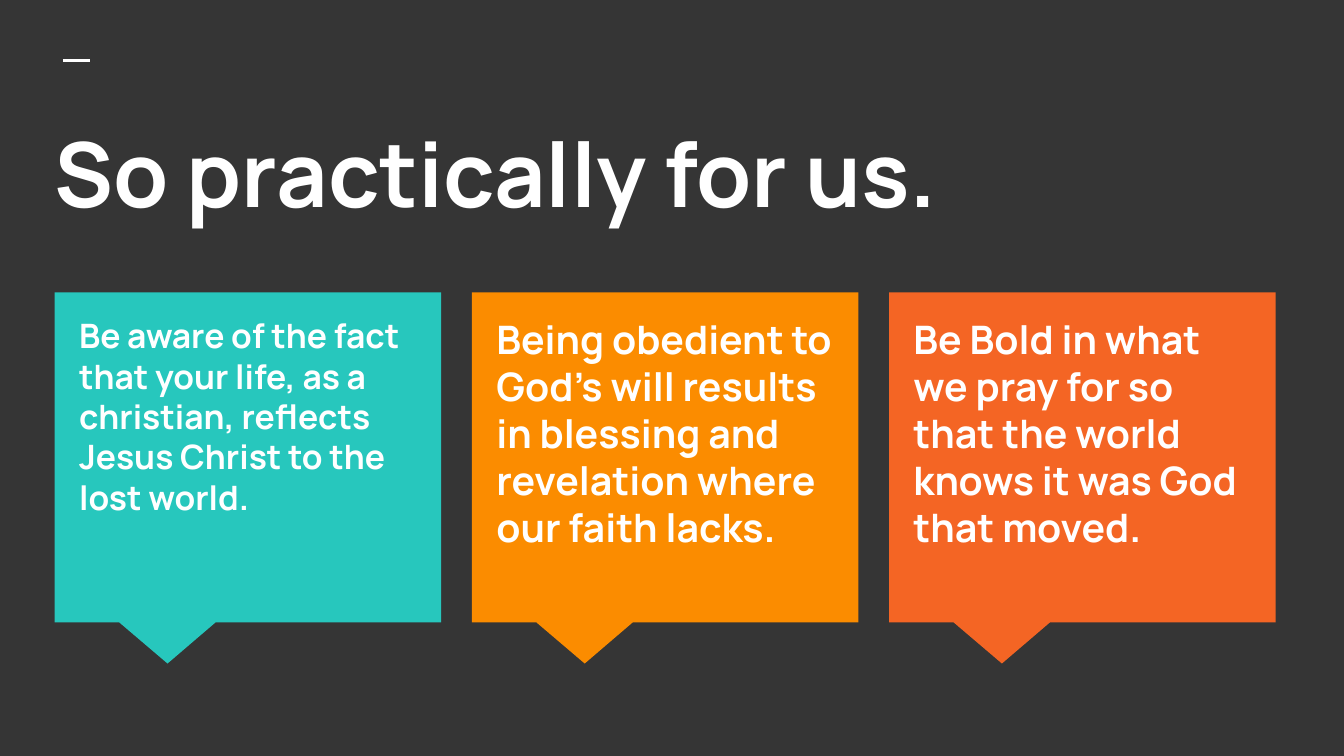
import pptx
import pptx.util
import pptx.dml.color
import pptx.enum.shapes
import pptx.enum.text
import pptx.oxml.ns
import lxml.etree

Pt = pptx.util.Pt
COLORS = {
    "background": "353535",
    "white": "FFFFFF",
    "teal": "27C7BD",
    "amber": "FB8C00",
    "orange": "F46524",
}
FONT = "Manrope"
CARDS = [
    ("teal", 18, "Be aware of the fact that your life, as a christian, "
                 "reflects Jesus Christ to the lost world."),
    ("amber", 21, "Being obedient to God’s will results in blessing and "
                  "revelation where our faith lacks."),
    ("orange", 21, "Be Bold in what we pray for so that the world knows "
                   "it was God that moved."),
]


def rgb(name):
    return pptx.dml.color.RGBColor.from_string(COLORS[name])


def add_text(s, box, text, size, space_after=0):
    tb = s.shapes.add_textbox(*(Pt(v) for v in box))
    tf = tb.text_frame
    tf.word_wrap = True
    tf.vertical_anchor = pptx.enum.text.MSO_ANCHOR.TOP
    tf.margin_left = tf.margin_right = Pt(7.2)
    tf.margin_top = tf.margin_bottom = Pt(7.2)
    p = tf.paragraphs[0]
    p.space_after = Pt(space_after)
    r = p.add_run()
    r.text = text
    r.font.name = FONT
    r.font.size = Pt(size)
    r.font.bold = True
    r.font.color.rgb = rgb("white")


def add_header(s, left, top, width, height):
    # Short accent line above the title
    x, y = left + 11.5, top - 23.8
    line = s.shapes.add_connector(
        pptx.enum.shapes.MSO_CONNECTOR.STRAIGHT,
        Pt(x), Pt(y), Pt(x + 14.4), Pt(y))
    line.line.color.rgb = rgb("white")
    line.line.width = Pt(1.5)
    lxml.etree.SubElement(line._element.spPr, pptx.oxml.ns.qn("a:effectLst"))

    # Title
    add_text(s, (left, top, width, height), "So practically for us.", 48)


def add_card(s, left, top, width, height, color, size, text):
    # Callout with its pointer below
    sp = s.shapes.add_shape(
        pptx.enum.shapes.MSO_SHAPE.RECTANGULAR_CALLOUT,
        Pt(left), Pt(top), Pt(width), Pt(height))
    sp.adjustments[0] = -0.208
    sp.adjustments[1] = 0.625
    sp.shadow.inherit = False
    sp.fill.solid()
    sp.fill.fore_color.rgb = rgb(color)
    sp.line.fill.background()

    # Message
    add_text(s, (left + 6, top + 5, width - 12, height - 19), text, size, 12)


def add_cards(s, left, top, width, height, gap):
    card_width = (width - gap * (len(CARDS) - 1)) / len(CARDS)
    for i, card in enumerate(CARDS):
        add_card(s, left + i * (card_width + gap), top, card_width, height, *card)


def main():
    prs = pptx.Presentation()
    prs.slide_width, prs.slide_height = Pt(720), Pt(405)
    s = prs.slides.add_slide(prs.slide_layouts[6])
    s.background.fill.solid()
    s.background.fill.fore_color.rgb = rgb("background")
    add_header(s, 22.2, 56.2, 679, 80.6)
    add_cards(s, 29.3, 156.7, 654, 176.7, 16.5)
    prs.save("out.pptx")


if __name__ == "__main__":
    main()
